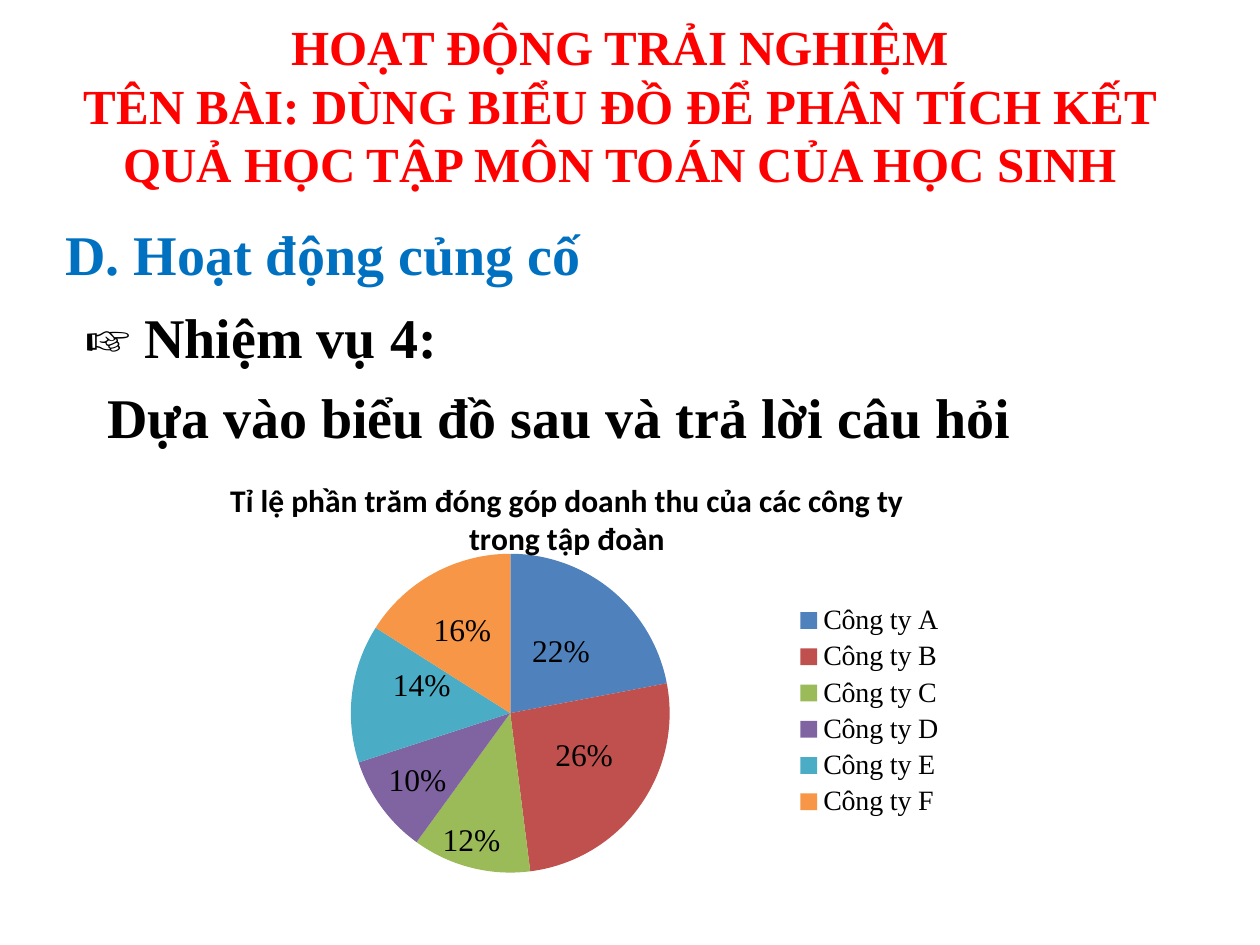
from dataclasses import dataclass

from lxml import etree
from pptx import Presentation
from pptx.chart.data import CategoryChartData
from pptx.dml.color import RGBColor
from pptx.enum.chart import XL_CHART_TYPE, XL_LABEL_POSITION, XL_LEGEND_POSITION
from pptx.enum.text import PP_ALIGN
from pptx.oxml.ns import qn
from pptx.util import Inches, Pt

PIE = XL_CHART_TYPE.PIE
LABEL_CENTER = XL_LABEL_POSITION.CENTER
LEGEND_RIGHT = XL_LEGEND_POSITION.RIGHT
LEFT, CENTER = PP_ALIGN.LEFT, PP_ALIGN.CENTER

SERIF, SANS = "Times New Roman", "Calibri"
COLORS = {"red": "FF0000", "blue": "0070C0", "black": "000000"}


@dataclass
class TextBlock:
    left: float
    top: float
    width: float
    height: float
    lines: tuple
    size: int
    color: str
    align: PP_ALIGN = LEFT
    margin: float = 0.1


@dataclass
class Company:
    name: str
    percent: int
    color: str
    label_shift: tuple = (0, 0)


TEXT_BLOCKS = [
    TextBlock(0.42, 0.08, 9, 1.51, (
        "HOẠT ĐỘNG TRẢI NGHIỆM",
        "TÊN BÀI: DÙNG BIỂU ĐỒ ĐỂ PHÂN TÍCH KẾT QUẢ HỌC TẬP MÔN TOÁN CỦA HỌC SINH",
    ), 28, "red", CENTER),
    TextBlock(0.42, 1.69, 6.83, 0.64, ("D. Hoạt động củng cố",), 32, "blue"),
    TextBlock(0.58, 2.35, 3.58, 0.64, ("☞ Nhiệm vụ 4:",), 32, "black"),
    TextBlock(0.42, 2.99, 9.08, 0.64, ("Dựa vào biểu đồ sau và trả lời câu hỏi",),
              32, "black", margin=0.43),
]

COMPANIES = [
    Company("Công ty A", 22, "4F81BD"),
    Company("Công ty B", 26, "C0504D", (0.01, -0.01)),
    Company("Công ty C", 12, "9BBB59", (-0.02, 0.12)),
    Company("Công ty D", 10, "8064A2", (-0.03, 0.05)),
    Company("Công ty E", 14, "4BACC6", (-0.01, -0.04)),
    Company("Công ty F", 16, "F79646", (-0.01, -0.03)),
]


def format_font(font, name: str, size: int, bold: bool, color: str = "black") -> None:
    for attribute, value in {"name": name, "size": Pt(size), "bold": bold}.items():
        setattr(font, attribute, value)
    font.color.rgb = RGBColor.from_string(COLORS[color])


def add_text(slide, block: TextBlock) -> None:
    shape = slide.shapes.add_textbox(
        Inches(block.left), Inches(block.top), Inches(block.width), Inches(block.height))
    frame = shape.text_frame
    frame.word_wrap = True
    frame.margin_left = Inches(block.margin)
    frame.text = "\n".join(block.lines)
    for paragraph in frame.paragraphs:
        paragraph.alignment = block.align
        format_font(paragraph.runs[0].font, SERIF, block.size, True, block.color)


def make_layout(values: dict):
    layout = etree.Element(qn("c:layout"))
    manual = etree.SubElement(layout, qn("c:manualLayout"))
    for name, value in values.items():
        etree.SubElement(manual, qn(f"c:{name}")).set("val", str(value))
    return layout


def place(element, anchor: str, values: dict) -> None:
    for old in element.findall(qn("c:layout")):
        element.remove(old)
    layout = make_layout(values)
    if anchor:
        element.find(qn(anchor)).addnext(layout)
    else:
        element.insert(0, layout)


def area(left: float, top: float, width: float, height: float) -> dict:
    return {"xMode": "edge", "yMode": "edge", "x": left, "y": top, "w": width, "h": height}


def add_pie(slide, companies: list) -> None:
    data = CategoryChartData()
    data.categories = [company.name for company in companies]
    data.add_series("Series 1", [company.percent for company in companies])
    chart = slide.shapes.add_chart(
        PIE, Inches(0.75), Inches(3.63), Inches(7.5), Inches(3.33), data).chart
    format_font(chart.font, SANS, 10, False)

    chart.has_title = True
    chart.chart_title.include_in_layout = False
    title = chart.chart_title.text_frame
    title.text = "Tỉ lệ phần trăm đóng góp doanh thu của các công ty trong tập đoàn"
    format_font(title.paragraphs[0].runs[0].font, SANS, 18, True)

    chart.has_legend = True
    chart.legend.position = LEGEND_RIGHT
    chart.legend.include_in_layout = True
    format_font(chart.legend.font, SERIF, 16, False)

    plot = chart.plots[0]
    plot.vary_by_categories = True
    series = plot.series[0]
    labels = series.data_labels
    formats = {"show_percentage": True, "show_value": False, "number_format": "0%",
               "number_format_is_linked": False, "position": LABEL_CENTER}
    for attribute, value in formats.items():
        setattr(labels, attribute, value)
    format_font(labels.font, SERIF, 18, False)

    for index, company in enumerate(companies):
        point = series.points[index]
        point.format.fill.solid()
        point.format.fill.fore_color.rgb = RGBColor.from_string(company.color)
        point.data_label.position = LABEL_CENTER
        format_font(point.data_label.font, SERIF, 18, False)

    for label, company in zip(chart.element.xpath(".//c:dLbl"), companies):
        horizontal, vertical = company.label_shift
        place(label, "c:idx", {"x": horizontal, "y": vertical})
        label.find(qn("c:showVal")).set("val", "0")
        label.find(qn("c:showPercent")).set("val", "1")

    place(chart.element.xpath(".//c:plotArea")[0], "",
          {"layoutTarget": "inner", **area(0.27, 0.23, 0.34, 0.76)})
    place(chart.element.xpath(".//c:legend")[0], "c:legendPos", area(0.72, 0.34, 0.2, 0.53))


def main() -> None:
    presentation = Presentation()
    presentation.slide_width = Inches(10)
    presentation.slide_height = Inches(7.5)
    slide = presentation.slides.add_slide(presentation.slide_layouts[6])
    for block in TEXT_BLOCKS:
        add_text(slide, block)
    add_pie(slide, COMPANIES)
    presentation.save("out.pptx")


if __name__ == "__main__":
    main()
